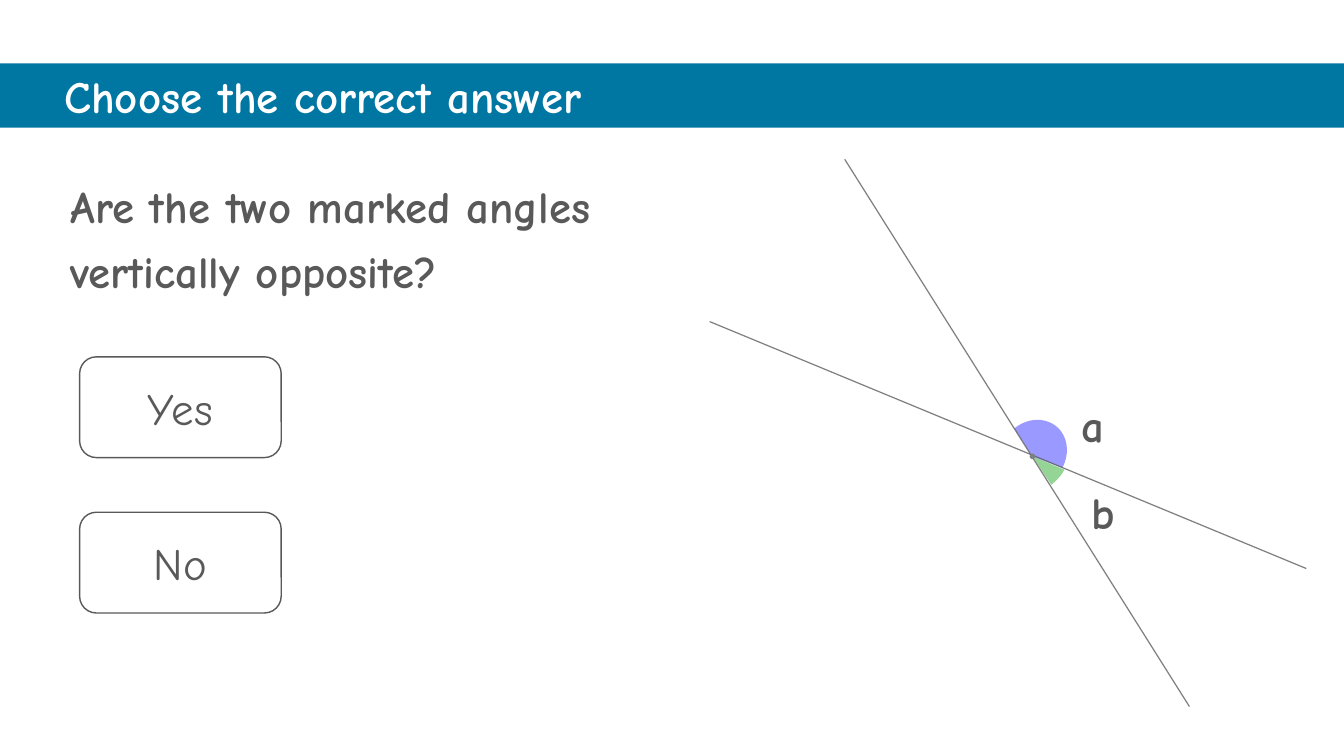
from dataclasses import dataclass

from pptx import Presentation
from pptx.dml.color import RGBColor
from pptx.enum.shapes import MSO_CONNECTOR, MSO_SHAPE
from pptx.enum.text import MSO_ANCHOR, MSO_AUTO_SIZE, PP_ALIGN
from pptx.oxml.ns import qn
from pptx.oxml.xmlchemy import OxmlElement
from pptx.shapes.autoshape import Shape
from pptx.slide import Slide
from pptx.util import Pt

LEFT, CENTER = PP_ALIGN.LEFT, PP_ALIGN.CENTER
TOP, MIDDLE = MSO_ANCHOR.TOP, MSO_ANCHOR.MIDDLE
STRAIGHT = MSO_CONNECTOR.STRAIGHT
ROUNDED, OVAL = MSO_SHAPE.ROUNDED_RECTANGLE, MSO_SHAPE.OVAL
NO_FIT = MSO_AUTO_SIZE.NONE

FONT, TEXT_SIZE = "Comic Neue", 32
COLORS = {
    "band": "0076A3",
    "white": "FFFFFF",
    "text": "595959",
    "ray": "616161",
    "vertex": "808080",
    "angle a": "0000FF",
    "angle b": "009900",
}
Point = tuple[float, float]
VERTEX: Point = (737.5, 326)
DOT_SIZE = 4
CURVE_STEPS = 16


@dataclass
class TextArea:
    text: str
    left: float
    top: float
    width: float
    height: float
    align: PP_ALIGN
    spacing: float
    margin: float = 0


@dataclass
class Angle:
    """A sector: Bezier curves as (control, control, end), closed at the vertex."""
    color: str
    opacity: int
    start: Point
    curves: list[tuple[Point, Point, Point]]


TEXT_AREAS = [
    TextArea("Are the two marked angles vertically opposite?",
             7.2, 116.6, 463, 96.5, LEFT, 1.2, 43.2),
    TextArea("a", 766.8, 277.9, 28.1, 75, CENTER, 1.07),
    TextArea("b", 761.8, 339.8, 51.8, 75, CENTER, 1.07),
]
ANSWERS = ["Yes", "No"]
ANSWER_LEFT, ANSWER_TOP, ANSWER_STEP = 56.9, 254.9, 111
ANSWER_WIDTH, ANSWER_HEIGHT = 144, 72
ANGLES = [
    Angle("angle b", 42, (751, 346.3),
          [((754.6, 343.4), (758.2, 339.8), (760.3, 335.5))]),
    Angle("angle a", 40, (758.9, 334.1),
          [((764.6, 323.3), (762.5, 311), (754.6, 304.6)),
           ((746.6, 298.1), (734.4, 298.1), (724.6, 306))]),
]
RAYS = [((506.9, 229.7), (933.1, 406.1)), ((603.4, 113.8), (849.6, 504.7))]


def rgb(name: str) -> RGBColor:
    return RGBColor.from_string(COLORS[name])


def set_opacity(shape, percent: int) -> None:
    alpha = OxmlElement("a:alpha")
    alpha.set("val", str(percent * 1000))
    shape._element.spPr.find(".//" + qn("a:srgbClr")).append(alpha)


def write_text(shape: Shape, text: str, color: str, bold: bool,
               align: PP_ALIGN, anchor: MSO_ANCHOR, spacing: float = 1) -> None:
    frame = shape.text_frame
    frame.text = text
    frame.word_wrap = True
    frame.auto_size = NO_FIT
    frame.vertical_anchor = anchor
    para = frame.paragraphs[0]
    para.alignment = align
    para.line_spacing = spacing
    for span in para.runs:
        span.font.name = FONT
        span.font.size = Pt(TEXT_SIZE)
        span.font.bold = bold
        span.font.color.rgb = rgb(color)


def draw_title(page: Slide) -> None:
    title = page.shapes.title
    title.left, title.top, title.width, title.height = Pt(0), Pt(45.2), Pt(960), Pt(46)
    title.fill.solid()
    title.fill.fore_color.rgb = rgb("band")
    write_text(title, "Choose the correct answer", "white", True, LEFT, MIDDLE)
    title.text_frame.margin_left = Pt(46)


def draw_text_area(page: Slide, area: TextArea) -> None:
    box = page.shapes.add_textbox(
        Pt(area.left), Pt(area.top), Pt(area.width), Pt(area.height))
    write_text(box, area.text, "text", True, area.align, TOP, area.spacing)
    box.text_frame.margin_left = Pt(area.margin)
    box.text_frame.margin_right = Pt(0)


def draw_answer(page: Slide, text: str, top: float) -> None:
    button = page.shapes.add_shape(
        ROUNDED, Pt(ANSWER_LEFT), Pt(top), Pt(ANSWER_WIDTH), Pt(ANSWER_HEIGHT))
    button.shadow.inherit = False
    button.fill.background()
    button.line.color.rgb = rgb("text")
    button.line.width = Pt(1)
    write_text(button, text, "text", False, CENTER, MIDDLE)


def curve_points(start: Point, first: Point, second: Point, end: Point) -> list[Point]:
    points = []
    for step in range(1, CURVE_STEPS + 1):
        t = step / CURVE_STEPS
        weights = ((1 - t) ** 3, 3 * t * (1 - t) ** 2, 3 * t ** 2 * (1 - t), t ** 3)
        corners = (start, first, second, end)
        points.append((sum(w * x for w, (x, _) in zip(weights, corners)),
                       sum(w * y for w, (_, y) in zip(weights, corners))))
    return points


def draw_angle(page: Slide, angle: Angle) -> None:
    outline = [angle.start]
    for curve in angle.curves:
        outline += curve_points(outline[-1], *curve)
    outline.append(VERTEX)
    first, *rest = [(Pt(x), Pt(y)) for x, y in outline]
    builder = page.shapes.build_freeform(*first)
    builder.add_line_segments(rest, close=True)
    sector = builder.convert_to_shape()
    sector.shadow.inherit = False
    sector.fill.solid()
    sector.fill.fore_color.rgb = rgb(angle.color)
    sector.line.fill.background()
    set_opacity(sector, angle.opacity)


def draw_ray(page: Slide, start: Point, end: Point) -> None:
    ray = page.shapes.add_connector(STRAIGHT, *(Pt(value) for value in start + end))
    ray.line.color.rgb = rgb("ray")
    ray.line.width = Pt(0.88)
    set_opacity(ray, 80)
    ray._element.spPr.append(OxmlElement("a:effectLst"))


def draw_vertex(page: Slide) -> None:
    x, y = VERTEX
    dot = page.shapes.add_shape(
        OVAL, Pt(x - DOT_SIZE / 2), Pt(y - DOT_SIZE / 2), Pt(DOT_SIZE), Pt(DOT_SIZE))
    dot.shadow.inherit = False
    dot.fill.solid()
    dot.fill.fore_color.rgb = rgb("vertex")
    dot.line.fill.background()


def main() -> None:
    deck = Presentation()
    deck.slide_width, deck.slide_height = Pt(960), Pt(540)
    page = deck.slides.add_slide(deck.slide_layouts.get_by_name("Title Only"))
    draw_title(page)
    for area in TEXT_AREAS:
        draw_text_area(page, area)
    for index, answer in enumerate(ANSWERS):
        draw_answer(page, answer, ANSWER_TOP + index * ANSWER_STEP)
    for angle in ANGLES:
        draw_angle(page, angle)
    for start, end in RAYS:
        draw_ray(page, start, end)
    draw_vertex(page)
    deck.save("out.pptx")


if __name__ == "__main__":
    main()
